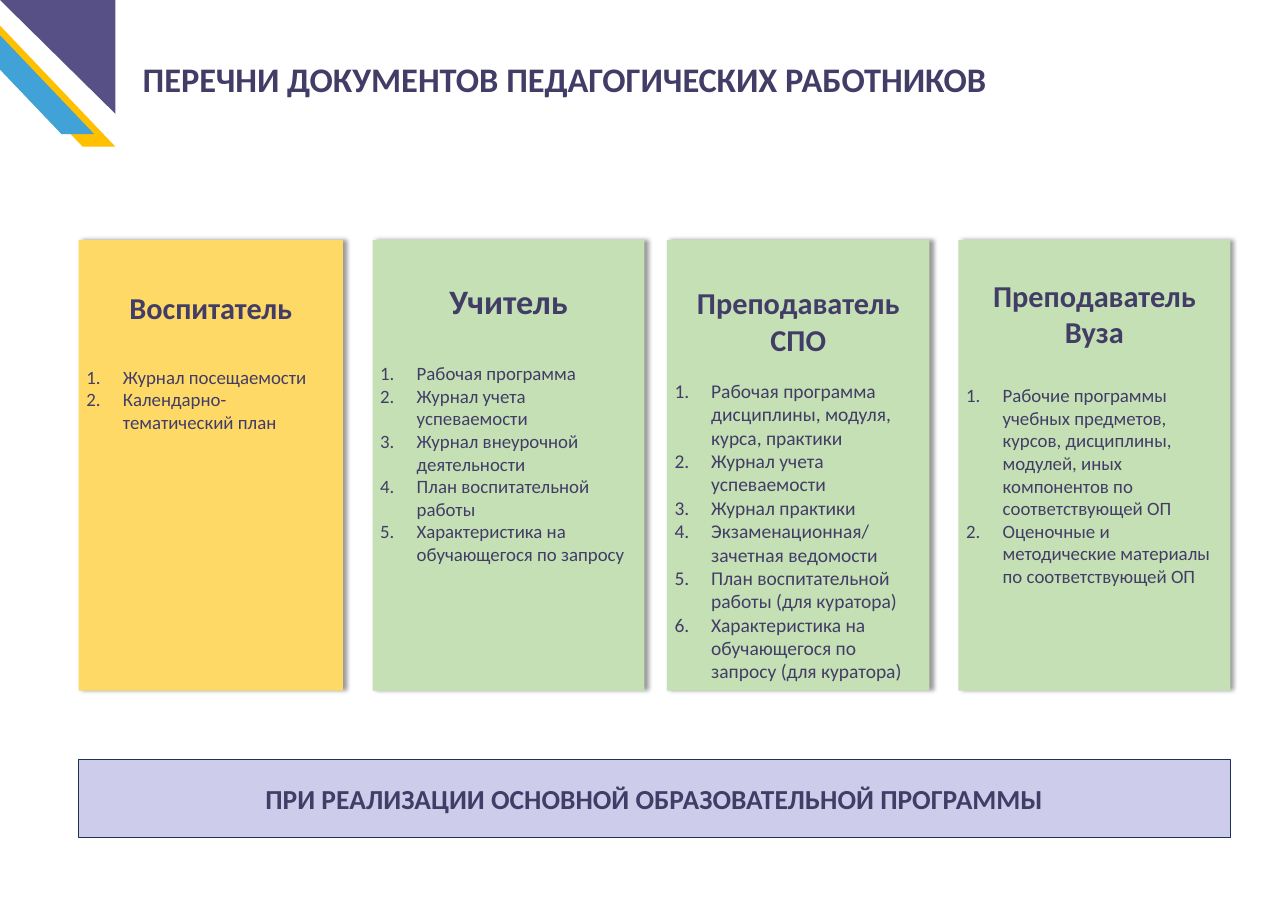
from dataclasses import dataclass
from lxml.etree import SubElement as Sub
from pptx import Presentation
from pptx.dml.color import RGBColor as Rgb
from pptx.enum.shapes import MSO_SHAPE as Kind
from pptx.enum.text import MSO_ANCHOR as Anchor, MSO_AUTO_SIZE as Fit, PP_ALIGN as Align
from pptx.oxml.ns import qn
from pptx.util import Pt


@dataclass(frozen=True)
class Theme:
    """Colours, font and type sizes of the slide."""
    font: str = "Calibri"
    ink: str = "423D67"
    violet: str = "565087"
    blue: str = "41A2D8"
    gold: str = "FFC000"
    sand: str = "FFD966"
    green: str = "C5E0B4"
    lilac: str = "CDCDEB"
    navy: str = "1E3256"
    title: float = 31.8
    band: float = 25.4
    head: float = 28
    large: float = 31.6
    body: float = 17.4
    wide: float = 18


LOOK = Theme()
TOP, HIGH = 221.8, 416.2
LEFT, SPAN = 72.7, 1064.2
INDENT = 33.8

CARDS = [
    dict(left=LEFT, width=244.1, fill=LOOK.sand, inset=45, gap=37,
         head=["Воспитатель"], size=LOOK.head, body=LOOK.body,
         items=["Журнал посещаемости", "Календарно-тематический план"]),
    dict(left=344.2, width=251.3, fill=LOOK.green, inset=37.5, gap=37,
         head=["Учитель"], size=LOOK.large, body=LOOK.body,
         items=["Рабочая программа", "Журнал учета успеваемости",
                "Журнал внеурочной деятельности", "План воспитательной работы",
                "Характеристика на обучающегося по запросу"]),
    dict(left=616.3, width=242.6, fill=LOOK.green, inset=41, gap=20,
         head=["Преподаватель СПО"], size=LOOK.head, body=LOOK.wide,
         items=["Рабочая программа дисциплины, модуля, курса, практики",
                "Журнал учета успеваемости", "Журнал практики",
                "Экзаменационная/ зачетная ведомости",
                "План воспитательной работы (для куратора)",
                "Характеристика на обучающегося по запросу (для куратора)"]),
    dict(left=885.6, width=251.3, fill=LOOK.green, inset=34, gap=31.5,
         head=["Преподаватель", "Вуза"], size=LOOK.head, body=LOOK.body,
         items=["Рабочие программы учебных предметов, курсов, дисциплины, модулей, "
                "иных компонентов по соответствующей ОП",
                "Оценочные и методические материалы по соответствующей ОП"]),
]


def put(item, **values):
    """Set each given format value on an object."""
    for name, value in values.items():
        setattr(item, name, value)


def write(para, text, size, bold=True, align=Align.CENTER):
    """Fill a paragraph with one formatted run."""
    para.alignment = align
    run = para.add_run()
    run.text = text
    put(run.font, name=LOOK.font, size=Pt(size), bold=bold)
    run.font.color.rgb = Rgb.from_string(LOOK.ink)


def block(slide, kind, box, fill):
    """Add a plain filled shape without outline or shadow."""
    shape = slide.shapes.add_shape(kind, *map(Pt, box))
    shape.shadow.inherit = False
    shape.fill.solid()
    shape.fill.fore_color.rgb = Rgb.from_string(fill)
    shape.line.fill.background()
    return shape


def stripe(slide, left, top, fill):
    """Add one slanted corner stripe."""
    shape = block(slide, Kind.PARALLELOGRAM, (left, top, 163.4, 139.7), fill)
    shape.adjustments[0] = 0.953
    shape.element.spPr.find(qn("a:xfrm")).set("flipH", "1")


def shade(shape):
    """Give a shape a soft shadow on its right."""
    effects = shape.element.spPr.find(qn("a:effectLst"))
    outer = Sub(effects, qn("a:outerShdw"), blurRad=str(Pt(4)), dist=str(Pt(3)),
                dir="0", algn="l", rotWithShape="0")
    tint = Sub(outer, qn("a:srgbClr"), val="000000")
    Sub(tint, qn("a:alpha"), val="40000")


def number(para):
    """Number a paragraph with a hanging indent."""
    props = para._p.get_or_add_pPr()
    put_in = {"marL": Pt(INDENT), "indent": -Pt(INDENT)}
    for name, value in put_in.items():
        props.set(name, str(value))
    Sub(props, qn("a:buFont"), typeface="+mj-lt")
    Sub(props, qn("a:buAutoNum"), type="arabicPeriod")


def card(slide, left, width, fill, inset, gap, head, size, body, items):
    """Add a card with a heading and a numbered list."""
    shape = block(slide, Kind.RECTANGLE, (left, TOP, width, HIGH), fill)
    shade(shape)
    frame = shape.text_frame
    put(frame, word_wrap=True, vertical_anchor=Anchor.TOP, margin_top=Pt(inset))
    for i, text in enumerate(head):
        para = frame.add_paragraph() if i else frame.paragraphs[0]
        write(para, text, size)
    for i, text in enumerate(items):
        para = frame.add_paragraph()
        para.space_before = Pt(0 if i else gap)
        number(para)
        write(para, text, body, False, Align.LEFT)


def title(slide, text):
    """Place and format the slide title."""
    shape = slide.shapes.title
    put(shape, left=Pt(124.6), top=Pt(49.7), width=Pt(846), height=Pt(46.1))
    frame = shape.text_frame
    put(frame, word_wrap=True, auto_size=Fit.NONE, vertical_anchor=Anchor.TOP)
    write(frame.paragraphs[0], text, LOOK.title, align=Align.LEFT)


def band(slide, text):
    """Add the outlined band at the foot."""
    shape = block(slide, Kind.RECTANGLE, (LEFT, 702, SPAN, 72), LOOK.lilac)
    shape.line.color.rgb = Rgb.from_string(LOOK.navy)
    shape.line.width = Pt(1)
    put(shape.text_frame, word_wrap=True, vertical_anchor=Anchor.MIDDLE)
    write(shape.text_frame.paragraphs[0], text, LOOK.band)


def main():
    """Build and save the slide."""
    deck = Presentation()
    put(deck, slide_width=Pt(1190.16), slide_height=Pt(841.68))
    slide = deck.slides.add_slide(deck.slide_layouts[5])
    stripe(slide, -56.9, -4.3, LOOK.gold)
    stripe(slide, -76.3, -15.8, LOOK.blue)
    block(slide, Kind.RIGHT_TRIANGLE, (0, 0, 106.6, 105.1), LOOK.violet).rotation = 180
    title(slide, "ПЕРЕЧНИ ДОКУМЕНТОВ ПЕДАГОГИЧЕСКИХ РАБОТНИКОВ")
    for values in CARDS:
        card(slide, **values)
    band(slide, "ПРИ РЕАЛИЗАЦИИ ОСНОВНОЙ ОБРАЗОВАТЕЛЬНОЙ ПРОГРАММЫ")
    deck.save("out.pptx")


if __name__ == "__main__":
    main()
